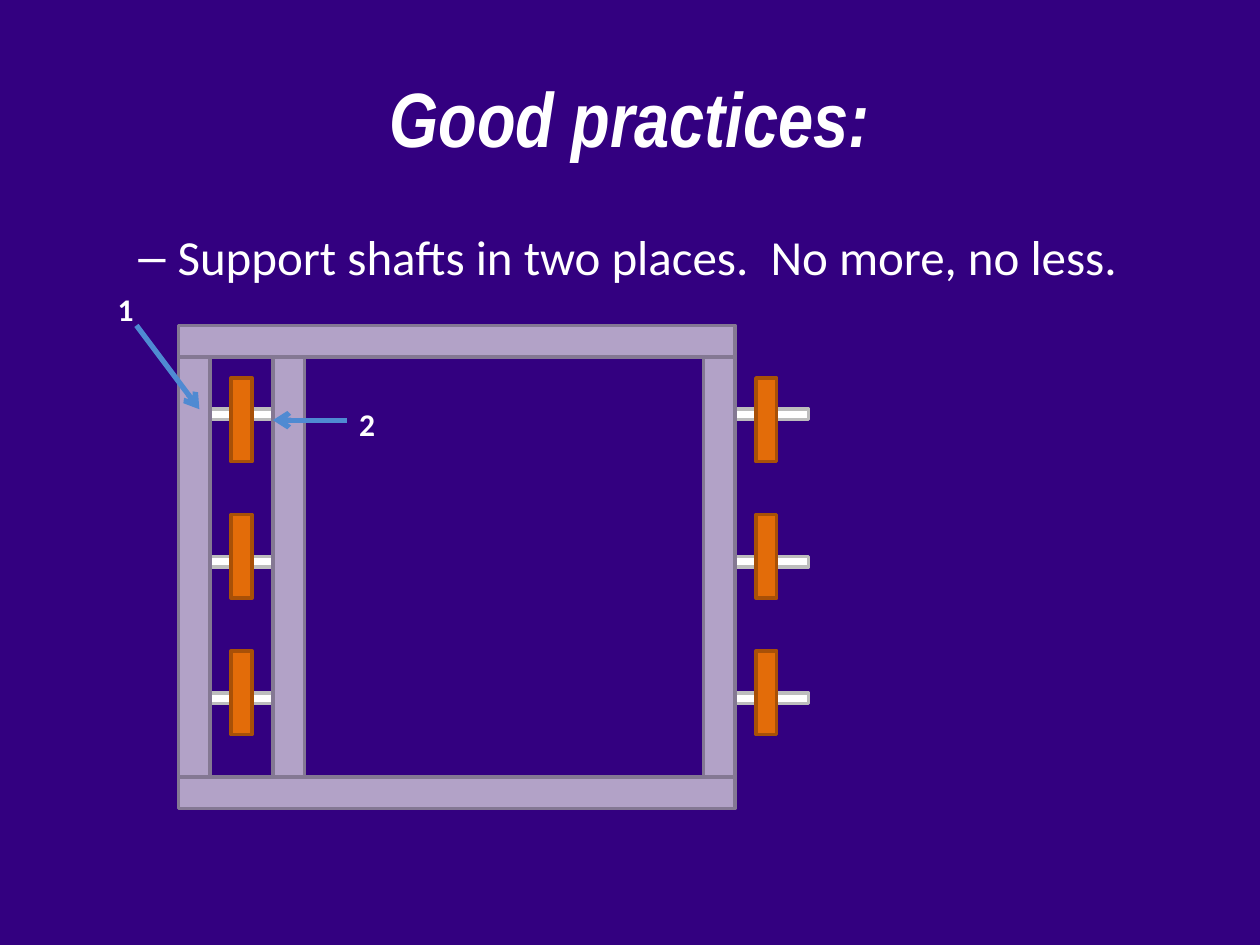
from lxml.etree import SubElement
from pptx import Presentation
from pptx.dml.color import RGBColor
from pptx.enum.shapes import MSO_CONNECTOR as CONN, MSO_SHAPE as SHAPE
from pptx.enum.text import MSO_ANCHOR as ANCHOR, MSO_AUTO_SIZE as AUTO, PP_ALIGN as ALIGN
from pptx.oxml.ns import qn
from pptx.util import Cm, Pt

FRAME = ("B2A2C7", "847893")
SHAFT = ("FFFFFF", "BDBDBD")
WHEEL = ("E36C09", "A85007")


def rgb(value):
    """Turn a hex string into a colour."""
    return RGBColor.from_string(value)


def add_bar(s, x, y, w, h, colours):
    """Add an outlined rectangle, measured in centimetres."""
    sp = s.shapes.add_shape(SHAPE.RECTANGLE, Cm(x), Cm(y), Cm(w), Cm(h))
    fill, line = colours
    sp.shadow.inherit = False
    sp.fill.solid()
    sp.fill.fore_color.rgb = rgb(fill)
    sp.line.color.rgb = rgb(line)
    sp.line.width = Pt(2)


def add_arrow(s, x1, y1, x2, y2):
    """Add a straight arrow pointing at the second point."""
    c = s.shapes.add_connector(CONN.STRAIGHT, Cm(x1), Cm(y1), Cm(x2), Cm(y2))
    c.line.color.rgb = rgb("4F8AD2")
    c.line.width = Pt(3)
    SubElement(c.line._get_or_add_ln(), qn("a:tailEnd"), type="arrow")
    SubElement(c._element.spPr, qn("a:effectLst"))


def format_text(p, size, font="Calibri", bold=False, italic=False):
    """Format every run of a paragraph in white."""
    for r in p.runs:
        r.font.size = Pt(size)
        r.font.name = font
        r.font.bold = bold
        r.font.italic = italic
        r.font.color.rgb = rgb("FFFFFF")


def set_title(s, text):
    """Place and format the title placeholder."""
    sp = s.shapes.title
    sp.left, sp.top, sp.width, sp.height = Cm(1.27), Cm(0.76), Cm(22.86), Cm(3.18)
    tf = sp.text_frame
    tf.text = text
    tf.vertical_anchor = ANCHOR.MIDDLE
    p = tf.paragraphs[0]
    p.alignment = ALIGN.CENTER
    format_text(p, 44, "Arial Narrow", bold=True, italic=True)


def add_point(s, text):
    """Add the dashed second-level point below the title."""
    tf = s.shapes.add_textbox(Cm(1.27), Cm(4.45), Cm(22.86), Cm(12.57)).text_frame
    tf.word_wrap = True
    tf.text = text
    p = tf.paragraphs[0]
    p.level = 1
    pPr = p._p.get_or_add_pPr()
    pPr.set("marL", str(Cm(2.06)))
    pPr.set("indent", str(Cm(-0.79)))
    SubElement(pPr, qn("a:buFont"), typeface="Arial")
    SubElement(pPr, qn("a:buChar"), char="–")
    format_text(p, 28)


def add_label(s, text, x, y):
    """Add a bold number that names a support."""
    tf = s.shapes.add_textbox(Cm(x), Cm(y), Cm(0.84), Cm(1.02)).text_frame
    tf.word_wrap = False
    tf.auto_size = AUTO.SHAPE_TO_FIT_TEXT
    tf.text = text
    format_text(tf.paragraphs[0], 18, bold=True)


def add_mechanism(s):
    """Draw the shafts, then the frame over them, then the wheels."""
    for x in (4.23, 14.82):
        for y in (8.25, 11.22, 13.97):
            add_bar(s, x, y, 1.48, 0.21, SHAFT)
    for x in (3.6, 5.5, 14.18):
        add_bar(s, x, 6.98, 0.64, 9.1, FRAME)
    for y in (6.56, 15.66):
        add_bar(s, 3.6, y, 11.22, 0.64, FRAME)
    for x in (4.66, 15.24):
        for row in range(3):
            add_bar(s, x, 7.62 + 2.75 * row, 0.42, 1.69, WHEEL)


def main():
    """Build and save the slide."""
    prs = Presentation()
    prs.slide_width, prs.slide_height = Cm(25.4), Cm(19.05)
    s = prs.slides.add_slide(prs.slide_layouts[5])
    s.background.fill.solid()
    s.background.fill.fore_color.rgb = rgb("330080")
    set_title(s, "Good practices:")
    add_point(s, "Support shafts in two places.  No more, no less.")
    add_mechanism(s)
    add_arrow(s, 2.75, 6.56, 4.02, 8.25)
    add_arrow(s, 6.99, 8.47, 5.5, 8.47)
    add_label(s, "1", 2.12, 5.72)
    add_label(s, "2", 6.99, 8.04)
    prs.save("out.pptx")


if __name__ == "__main__":
    main()
